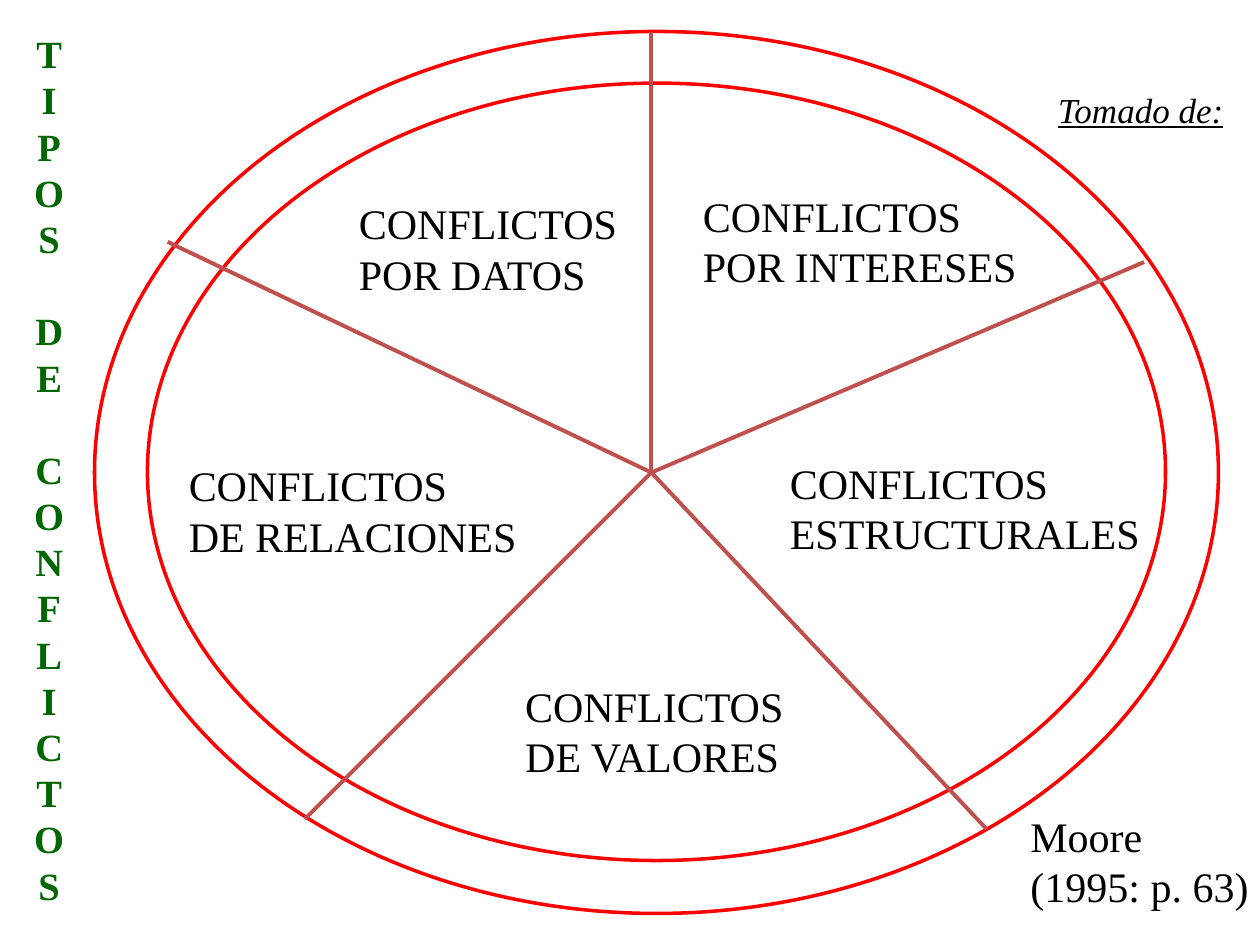
import pptx
import pptx.dml.color
import pptx.enum.shapes
import pptx.enum.text
import pptx.oxml
import pptx.oxml.ns
import pptx.util
from pptx.util import Inches

RED = pptx.dml.color.RGBColor(0xFF, 0x00, 0x00)
BRICK = pptx.dml.color.RGBColor(0xC0, 0x50, 0x4D)
GREEN = pptx.dml.color.RGBColor(0x00, 0x66, 0x00)
BLACK = pptx.dml.color.RGBColor(0x00, 0x00, 0x00)
FONT = "Times New Roman"

TITLE = "TIPOS DE CONFLICTOS"
TITLE_SIZE = 22
LINE_PITCH = 1.2  # line height relative to the font size

CENTER = (5.17, 3.75)
RINGS = [(0.75, 0.25, 8.92, 7), (1.17, 0.66, 8.08, 6.17)]
SPOKE_ENDS = [(5.17, 0.25), (9.08, 2.08), (1.33, 1.92), (2.42, 6.5), (7.83, 6.58)]
SECTORS = [
    ("POR DATOS", 2.75, 1.52, 2.26),
    ("POR INTERESES", 5.48, 1.46, 2.69),
    ("DE RELACIONES", 1.4, 3.6, 2.8),
    ("ESTRUCTURALES", 6.17, 3.58, 2.98),
    ("DE VALORES", 4.07, 5.35, 2.27),
]


def add_run(p, text, size, color=BLACK):
    r = p.add_run()
    r.text = text
    r.font.name = FONT
    r.font.size = pptx.util.Pt(size)
    r.font.color.rgb = color
    return r


def prepare_frame(tf):
    tf.word_wrap = False
    tf.auto_size = pptx.enum.text.MSO_AUTO_SIZE.SHAPE_TO_FIT_TEXT
    tf.vertical_anchor = pptx.enum.text.MSO_ANCHOR.TOP


def next_paragraph(tf, index):
    return tf.paragraphs[0] if index == 0 else tf.add_paragraph()


def set_vertical_title(s):
    """Stack the title letter by letter, with a line's gap between words."""
    sp = s.shapes.title
    sp.left, sp.top, sp.width, sp.height = map(Inches, (0.17, 0.19, 0.44, 7.06))
    tf = sp.text_frame
    prepare_frame(tf)
    letters = [(letter, n > 0 and i == 0)
               for n, word in enumerate(TITLE.split())
               for i, letter in enumerate(word)]
    for index, (letter, starts_word) in enumerate(letters):
        p = next_paragraph(tf, index)
        p.alignment = pptx.enum.text.PP_ALIGN.CENTER
        if starts_word:
            p.space_before = pptx.util.Pt(TITLE_SIZE * LINE_PITCH)
        add_run(p, letter, TITLE_SIZE, GREEN).font.bold = True


def add_ring(s, box):
    sp = s.shapes.add_shape(pptx.enum.shapes.MSO_SHAPE.OVAL, *map(Inches, box))
    sp.shadow.inherit = False
    sp.fill.background()
    sp.line.color.rgb = RED
    sp.line.width = pptx.util.Pt(2)


def add_spoke(s, end):
    line = s.shapes.add_connector(pptx.enum.shapes.MSO_CONNECTOR.STRAIGHT,
                                  *map(Inches, CENTER + end))
    line.line.color.rgb = BRICK
    line.line.width = pptx.util.Pt(2.25)
    # An empty effect list removes the theme shadow
    line._element.spPr.append(pptx.oxml.parse_xml(
        f'<a:effectLst {pptx.oxml.ns.nsdecls("a")}/>'))


def add_label(s, lines, left, top, width, height=0.9, size=24):
    tf = s.shapes.add_textbox(*map(Inches, (left, top, width, height))).text_frame
    prepare_frame(tf)
    return [add_run(next_paragraph(tf, i), text, size)
            for i, text in enumerate(lines)]


def main():
    prs = pptx.Presentation()
    prs.slide_width, prs.slide_height = Inches(10), Inches(7.5)
    s = prs.slides.add_slide(prs.slide_layouts[5])
    set_vertical_title(s)

    # Wheel of conflict types
    for box in RINGS:
        add_ring(s, box)
    for end in SPOKE_ENDS:
        add_spoke(s, end)
    for kind, left, top, width in SECTORS:
        add_label(s, ["CONFLICTOS", kind], left, top, width)

    # Citation
    for r in add_label(s, ["Tomado de:"], 8.3, 0.65, 1.54, 0.43, 20):
        r.font.italic = True
        r.font.underline = True
    add_label(s, ["Moore", "(1995: p. 63)"], 8.08, 6.38, 1.93)

    prs.save("out.pptx")


if __name__ == "__main__":
    main()
